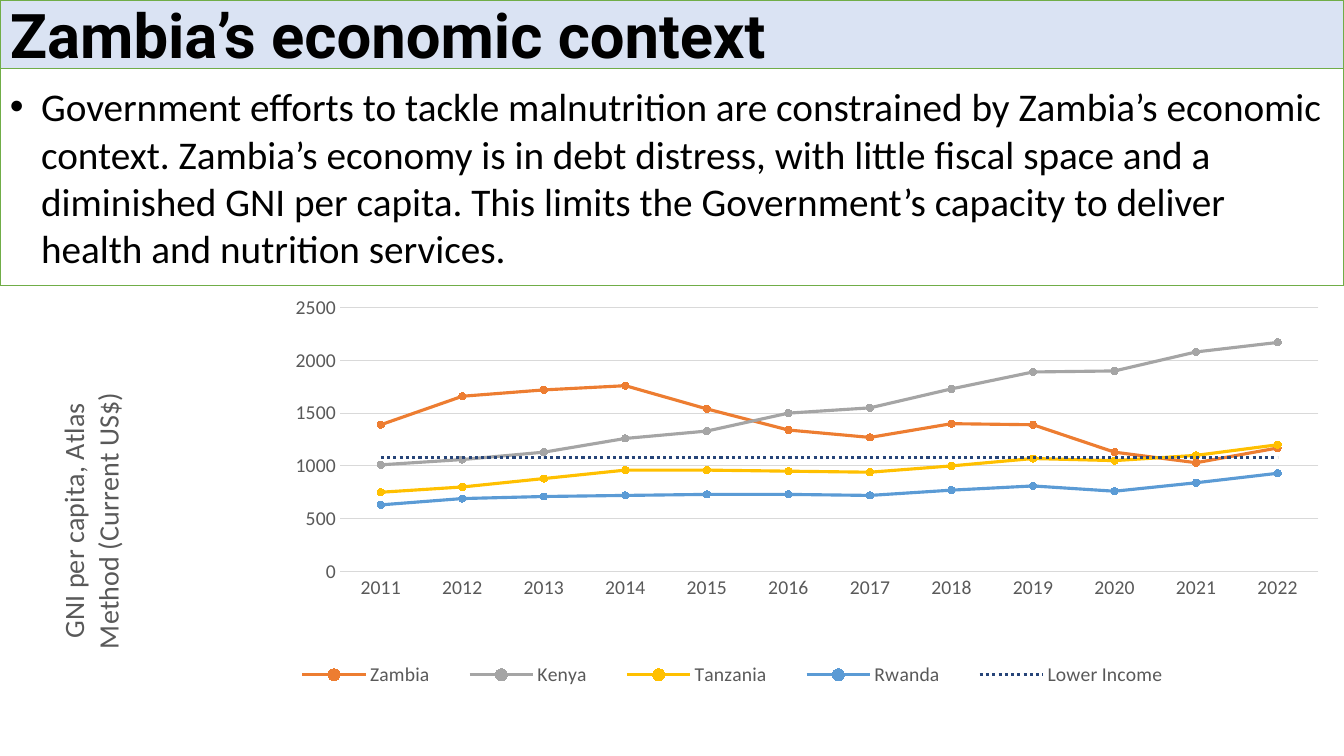
from lxml import etree
from pptx import Presentation
from pptx.chart.data import CategoryChartData
from pptx.dml.color import RGBColor
from pptx.enum.chart import XL_CHART_TYPE, XL_LEGEND_POSITION, XL_MARKER_STYLE, XL_TICK_MARK
from pptx.enum.dml import MSO_LINE
from pptx.enum.shapes import MSO_SHAPE
from pptx.enum.text import MSO_ANCHOR, PP_ALIGN
from pptx.oxml.ns import qn
from pptx.util import Inches, Pt


def paint(target, color):
    """Give a fill a solid hex colour."""
    target.solid()
    target.fore_color.rgb = RGBColor.from_string(color)


def place(parent, index, **shares):
    """Lay out a chart part by shares of the chart's size."""
    for old in parent.findall(qn("c:layout")):
        parent.remove(old)
    layout = etree.Element(qn("c:layout"))
    manual = etree.SubElement(layout, qn("c:manualLayout"))
    for tag, value in shares.items():
        etree.SubElement(manual, qn(f"c:{tag}")).set("val", str(value))
    parent.insert(index, layout)


deck = Presentation()
deck.slide_width, deck.slide_height = Inches(13.33), Inches(7.5)
slide = deck.slides.add_slide(deck.slide_layouts[6])
WIDTH = deck.slide_width
GREY, RULE = "595959", "D9D9D9"

# Heading and message bands
bands = [
    (0, 0.68, "DAE3F3", "Roboto", 44, True, "Zambia’s economic context"),
    (0.68, 2.15, "FFFFFF", "Calibri", 28, False,
     "Government efforts to tackle malnutrition are constrained by Zambia’s economic "
     "context. Zambia’s economy is in debt distress, with little fiscal space and a "
     "diminished GNI per capita. This limits the Government’s capacity to deliver "
     "health and nutrition services."),
]
for top, height, background, typeface, size, is_heading, wording in bands:
    band = slide.shapes.add_shape(MSO_SHAPE.RECTANGLE, 0, Inches(top), WIDTH, Inches(height))
    band.shadow.inherit = False
    paint(band.fill, background)
    paint(band.line.fill, "70AD47")
    band.line.width = Pt(1)
    band.text_frame.word_wrap = True
    band.text_frame.vertical_anchor = MSO_ANCHOR.MIDDLE
    paragraph = band.text_frame.paragraphs[0]
    paragraph.alignment = PP_ALIGN.LEFT
    if not is_heading:
        properties = paragraph._p.get_or_add_pPr()
        properties.set("marL", str(Inches(0.31)))
        properties.set("indent", str(-Inches(0.31)))
        etree.SubElement(properties, qn("a:buFont")).set("typeface", "Arial")
        etree.SubElement(properties, qn("a:buChar")).set("char", "•")
    run = paragraph.add_run()
    run.text = wording
    run.font.name, run.font.size, run.font.bold = typeface, Pt(size), is_heading
    paint(run.font.fill, "000000")

# Income per head by country
countries = [
    ("Zambia", "ED7D31", [1390, 1660, 1720, 1760, 1540, 1340, 1270, 1400, 1390, 1130, 1030, 1170]),
    ("Kenya", "A5A5A5", [1010, 1060, 1130, 1260, 1330, 1500, 1550, 1730, 1890, 1900, 2080, 2170]),
    ("Tanzania", "FFC000", [750, 800, 880, 960, 960, 950, 940, 1000, 1070, 1050, 1100, 1200]),
    ("Rwanda", "5B9BD5", [630, 690, 710, 720, 730, 730, 720, 770, 810, 760, 840, 930]),
    ("Lower Income", "264478", [1080] * 12),
]
income = CategoryChartData()
income.categories = [str(year) for year in range(2011, 2023)]
for country, _, values in countries:
    income.add_series(country, values)
chart = slide.shapes.add_chart(
    XL_CHART_TYPE.LINE_MARKERS, 0, Inches(2.91), WIDTH, Inches(4.07), income).chart
chart.has_title = False
chart.font.name, chart.font.size = "Calibri", Pt(14)
paint(chart.font.fill, GREY)
chart.plots[0].vary_by_categories = False

for series, (country, color, _) in zip(chart.plots[0].series, countries):
    series.smooth = False
    series.format.line.width = Pt(2.25)
    paint(series.format.line.fill, color)
    if country == "Lower Income":
        series.format.line.dash_style = MSO_LINE.ROUND_DOT
        series.marker.style = XL_MARKER_STYLE.NONE
    else:
        series.marker.style = XL_MARKER_STYLE.CIRCLE
        series.marker.size = 5
        paint(series.marker.format.fill, color)
        paint(series.marker.format.line.fill, color)

# Axes and gridlines
years, dollars = chart.category_axis, chart.value_axis
for axis in (years, dollars):
    axis.major_tick_mark = axis.minor_tick_mark = XL_TICK_MARK.NONE
dollars.minimum_scale, dollars.maximum_scale, dollars.major_unit = 0, 2500, 500
dollars.format.line.fill.background()
dollars.has_major_gridlines = True
for rule in (years.format.line, dollars.major_gridlines.format.line):
    paint(rule.fill, RULE)
    rule.width = Pt(0.75)

unit = dollars.axis_title.text_frame.paragraphs[0].add_run()
unit.text = "GNI per capita, Atlas Method (Current US$)"
unit.font.name, unit.font.size, unit.font.bold = "Calibri", Pt(20), False
paint(unit.font.fill, GREY)
direction = dollars.axis_title.text_frame._txBody.bodyPr
direction.set("rot", "-5400000")
direction.set("vert", "horz")

# Legend and placing of the chart's parts
chart.has_legend = True
chart.legend.position = XL_LEGEND_POSITION.BOTTOM
chart.legend.include_in_layout = False
place(chart._chartSpace.chart.plotArea, 0, layoutTarget="inner", xMode="edge", yMode="edge",
      x=0.253, y=0.035, w=0.728, h=0.643)
place(dollars.axis_title._element, 1, xMode="edge", yMode="edge", x=0.036, y=0.23)
place(chart.legend._element, 1, xMode="edge", yMode="edge", x=0.2, y=0.89, w=0.69, h=0.08)

deck.save("out.pptx")
